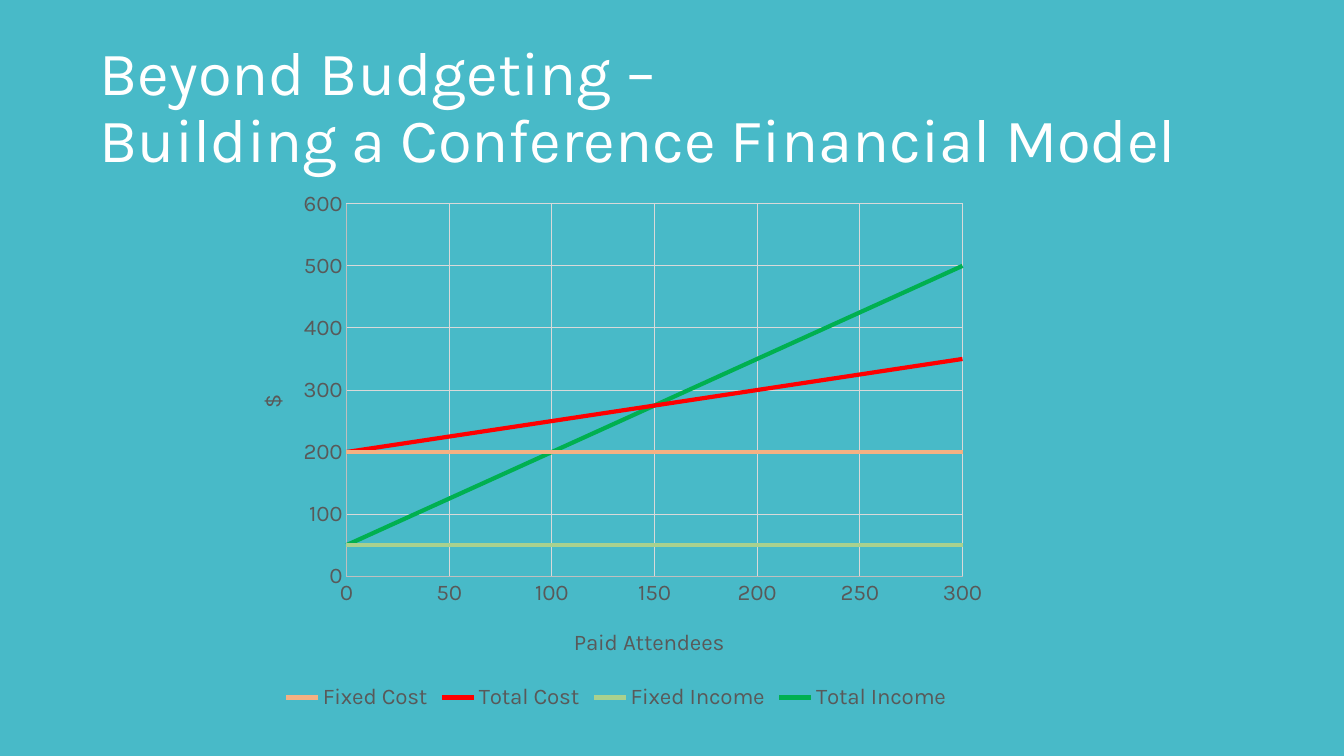
"""Build the conference financial model slide with its cost and income chart."""
from typing import NamedTuple

import pptx
import pptx.chart.axis
import pptx.chart.chart
import pptx.chart.data
import pptx.dml.color
import pptx.enum.chart
import pptx.enum.text
import pptx.oxml
import pptx.oxml.ns
import pptx.slide
import pptx.text.text
import pptx.util
from pptx.util import Cm

FONT = "Karla"
COLORS = {
    "background": "48BAC8",
    "title": "FFFFFF",
    "label": "595959",
    "axis": "BFBFBF",
    "grid": "D9D9D9",
    "fixed_cost": "F4B183",
    "total_cost": "FF0000",
    "fixed_income": "A9D18E",
    "total_income": "00B050",
}
ATTENDEES = (0, 100, 200, 300)


class MoneyLine(NamedTuple):
    name: str
    start: int
    step: int
    color: str


class AxisLabel(NamedTuple):
    text: str
    left: float
    top: float
    rotation: int


MONEY_LINES = (
    MoneyLine("Fixed Cost", 200, 0, "fixed_cost"),
    MoneyLine("Total Cost", 200, 50, "total_cost"),
    MoneyLine("Fixed Income", 50, 0, "fixed_income"),
    MoneyLine("Total Income", 50, 150, "total_income"),
)
ATTENDEE_LABEL = AxisLabel("Paid Attendees", 0.44, 0.83, 0)
DOLLAR_LABEL = AxisLabel("$", 0.03, 0.39, -5400000)


def rgb(name: str) -> pptx.dml.color.RGBColor:
    return pptx.dml.color.RGBColor.from_string(COLORS[name])


def style_font(font: pptx.text.text.Font, size: int, color: str) -> None:
    font.name = FONT
    font.size = pptx.util.Pt(size)
    font.bold = False
    font.color.rgb = rgb(color)


def set_layout(parent, position: int, **fractions: float) -> None:
    for layout in parent.findall(pptx.oxml.ns.qn("c:layout")):
        parent.remove(layout)
    target = '<c:layoutTarget val="inner"/>' if "w" in fractions else ""
    modes = "".join(f'<c:{key}Mode val="edge"/>' for key in ("x", "y"))
    values = "".join(f'<c:{key} val="{value}"/>' for key, value in fractions.items())
    parent.insert(position, pptx.oxml.parse_xml(
        f'<c:layout {pptx.oxml.ns.nsdecls("c")}><c:manualLayout>'
        f"{target}{modes}{values}</c:manualLayout></c:layout>"))


def style_axis(axis: pptx.chart.axis.ValueAxis, label: AxisLabel) -> None:
    axis.has_major_gridlines = True
    axis.major_tick_mark = pptx.enum.chart.XL_TICK_MARK.NONE
    axis.minor_tick_mark = pptx.enum.chart.XL_TICK_MARK.NONE
    for line, color in ((axis.format.line, "axis"), (axis.major_gridlines.format.line, "grid")):
        line.color.rgb = rgb(color)
        line.width = pptx.util.Pt(0.75)
    style_font(axis.tick_labels.font, 16, "label")
    text_frame = axis.axis_title.text_frame
    text_frame.text = label.text
    style_font(text_frame.paragraphs[0].runs[0].font, 16, "label")
    title = axis.axis_title.element
    title.find(".//" + pptx.oxml.ns.qn("a:bodyPr")).set("rot", str(label.rotation))
    set_layout(title, 1, x=label.left, y=label.top)


def add_title(slide: pptx.slide.Slide) -> None:
    text_frame = slide.shapes.add_textbox(Cm(2.26), Cm(0.91), Cm(29.21), Cm(3.68)).text_frame
    text_frame.word_wrap = True
    text_frame.vertical_anchor = pptx.enum.text.MSO_ANCHOR.MIDDLE
    paragraph = text_frame.paragraphs[0]
    paragraph.text = "Beyond Budgeting – \vBuilding a Conference Financial Model"
    paragraph.line_spacing = 0.9
    for run in paragraph.runs:
        style_font(run.font, 44, "title")


def add_money_chart(slide: pptx.slide.Slide) -> None:
    data = pptx.chart.data.XyChartData()
    for money_line in MONEY_LINES:
        points = data.add_series(money_line.name)
        for index, attendees in enumerate(ATTENDEES):
            points.add_data_point(attendees, money_line.start + index * money_line.step)
    chart: pptx.chart.chart.Chart = slide.shapes.add_chart(
        pptx.enum.chart.XL_CHART_TYPE.XY_SCATTER_LINES_NO_MARKERS,
        Cm(5.82), Cm(4.6), Cm(19.41), Cm(13.41), data).chart
    chart.has_title = False
    style_font(chart.font, 16, "label")
    chart.plots[0].vary_by_categories = False
    for series, money_line in zip(chart.plots[0].series, MONEY_LINES):
        series.smooth = False
        series.marker.style = pptx.enum.chart.XL_MARKER_STYLE.NONE
        series.format.line.color.rgb = rgb(money_line.color)
        series.format.line.width = pptx.util.Pt(3)
    style_axis(chart.category_axis, ATTENDEE_LABEL)
    style_axis(chart.value_axis, DOLLAR_LABEL)
    chart.category_axis.maximum_scale = 300
    chart.has_legend = True
    chart.legend.position = pptx.enum.chart.XL_LEGEND_POSITION.BOTTOM
    chart.legend.include_in_layout = False
    style_font(chart.legend.font, 16, "label")
    plot_area = chart.element.find(".//" + pptx.oxml.ns.qn("c:plotArea"))
    set_layout(plot_area, 0, x=0.15, y=0.04, w=0.8, h=0.7)


def main() -> None:
    presentation = pptx.Presentation()
    presentation.slide_width = Cm(33.87)
    presentation.slide_height = Cm(19.05)
    slide = presentation.slides.add_slide(presentation.slide_layouts[6])
    slide.background.fill.solid()
    slide.background.fill.fore_color.rgb = rgb("background")
    add_title(slide)
    add_money_chart(slide)
    presentation.save("out.pptx")


if __name__ == "__main__":
    main()
